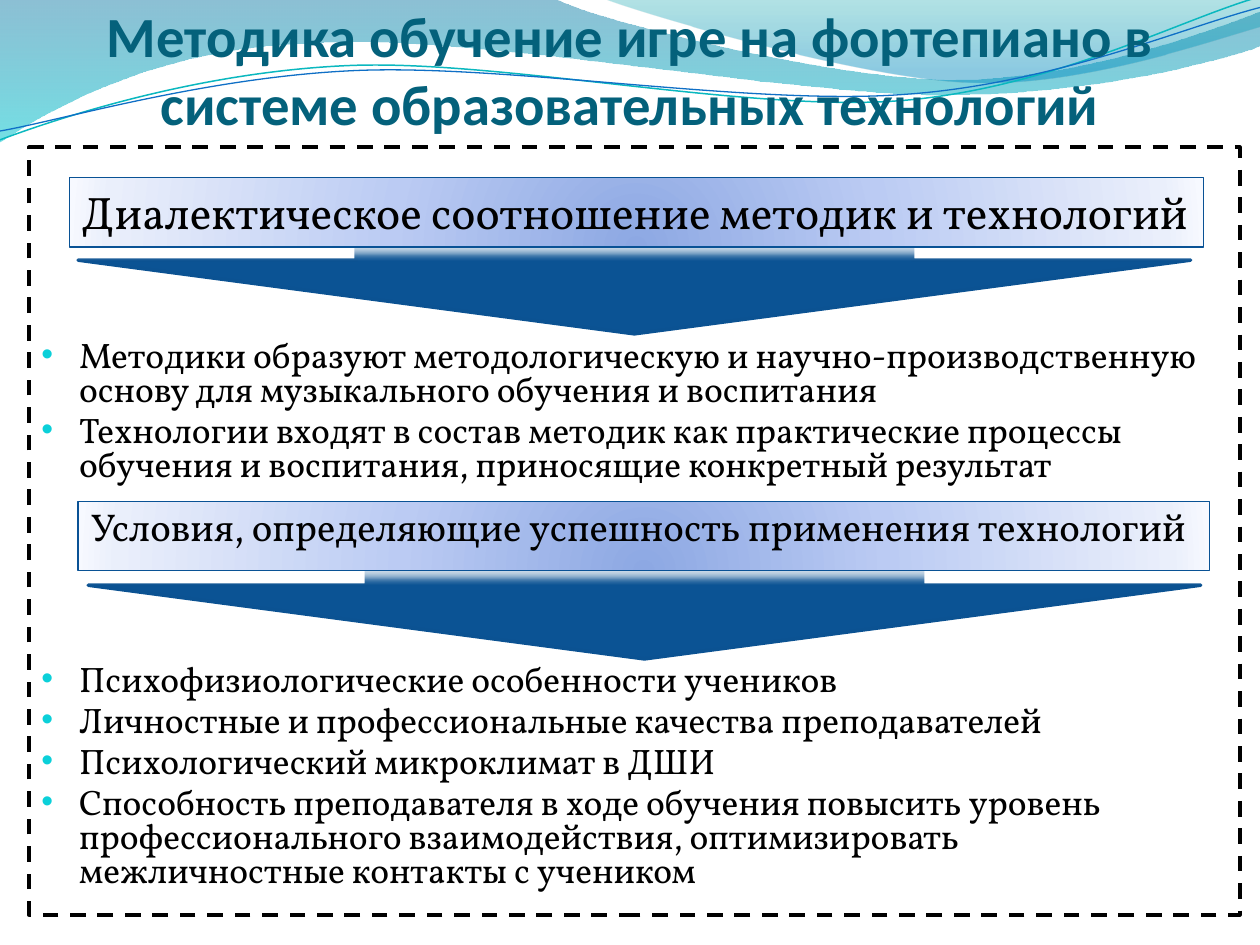
from math import cos, radians, sin

from lxml import etree
from pptx import Presentation
from pptx.dml.color import RGBColor
from pptx.enum.dml import MSO_LINE
from pptx.enum.shapes import MSO_SHAPE
from pptx.enum.text import MSO_ANCHOR, MSO_AUTO_SIZE, PP_ALIGN
from pptx.oxml import parse_xml
from pptx.oxml.ns import qn
from pptx.util import Inches, Pt

RECTANGLE, DOWN_ARROW, DASH = MSO_SHAPE.RECTANGLE, MSO_SHAPE.DOWN_ARROW, MSO_LINE.DASH
TOP, BOTTOM, NO_FIT = MSO_ANCHOR.TOP, MSO_ANCHOR.BOTTOM, MSO_AUTO_SIZE.NONE
LEFT, CENTER = PP_ALIGN.LEFT, PP_ALIGN.CENTER

BLACK = RGBColor(0x00, 0x00, 0x00)
TITLE_TEAL = RGBColor(0x04, 0x61, 0x7B)
ARROW_BLUE = RGBColor(0x0B, 0x53, 0x94)
ARROW_EDGE = RGBColor(0x0B, 0x52, 0x92)
BANNER_EDGE = RGBColor(0x09, 0x52, 0x95)
GLOW_WHITE = RGBColor(0xFF, 0xFF, 0xFF)
BULLET_CYAN = RGBColor(0x0B, 0xD0, 0xD9)
LINE_CYAN = RGBColor(0x0A, 0xB8, 0xBF)
LINE_BLUE = RGBColor(0x0F, 0x6F, 0xC6)
BANNER_STOPS = [(0, RGBColor(0x8D, 0xA8, 0xE3), 100), (43, RGBColor(0xBB, 0xCB, 0xF3), 100),
                (93, RGBColor(0xEA, 0xEF, 0xFB), 100), (100, RGBColor(0xF7, 0xF9, 0xFF), 100)]
DEEP_STOPS = [(0, RGBColor(0x00, 0x74, 0xA1), 45), (100, RGBColor(0x00, 0xC6, 0xCF), 55)]
PALE_STOPS = [(0, RGBColor(0x00, 0xA1, 0xA9), 30), (80, RGBColor(0x00, 0x8B, 0xBF), 45)]
DOWNWARD = '<a:lin ang="5400000" scaled="1"/>'
RADIAL = ('<a:path path="circle"><a:fillToRect l="50000" t="130000" '
          'r="50000" b="-30000"/></a:path>')

TITLE = "Методика обучение игре на фортепиано в системе образовательных технологий"
TITLE_FONT, BODY_FONT, BULLET_FONT = "Calibri", "Vollkorn", "Arial"
FRAME = (0.23, 1.17, 9.61, 6.09)
HANGING = 0.3
ARROW_SIZE = (8.83, 1.17)
SECTIONS = [
    {"heading": "Диалектическое соотношение методик и технологий",
     "banner": (0.55, 1.41, 9, 0.55), "arrow": (0.62, 1.48), "size": 26, "spacing": 1,
     "list": (0.23, 2.66, 9.53, 1.48),
     "points": [
         "Методики образуют методологическую и научно-производственную основу для "
         "музыкального обучения и воспитания",
         "Технологии входят в состав методик как практические процессы обучения и "
         "воспитания, приносящие конкретный результат"]},
    {"heading": "Условия, определяющие успешность применения технологий",
     "banner": (0.62, 3.98, 8.98, 0.55), "arrow": (0.7, 4.06), "size": 22.1, "spacing": 0.9,
     "list": (0.23, 5.23, 9.61, 2.03),
     "points": [
         "Психофизиологические особенности учеников",
         "Личностные и профессиональные качества преподавателей",
         "Психологический микроклимат в ДШИ",
         "Способность преподавателя в ходе обучения повысить уровень профессионального "
         "взаимодействия, оптимизировать межличностные контакты с учеником"]},
]
BANDS = [
    (DEEP_STOPS, (0, 0), [
        [(4.4, -0.01)],
        [(4.76, 0.17), (6.64, 0.63), (7.58, 0.63)],
        [(8.53, 0.63), (9.58, 0.26), (10, 0.09)],
        [(10.01, 0.36)],
        [(9.83, 0.44), (8.7, 0.76), (7.46, 0.75)],
        [(6.22, 0.75), (3.82, 0.28), (2.57, 0.34)],
        [(1.29, 0.36), (0.46, 0.83), (-0.01, 1.13)],
        [(0, 0)]]),
    (PALE_STOPS, (4.79, -0.01), [
        [(5.09, 0.11), (6.82, 0.62), (7.69, 0.65)],
        [(8.56, 0.69), (9.61, 0.32), (10, 0.21)],
        [(10, 0)],
        [(4.79, -0.01)]]),
]
STRAND_TILT = -2.7
STRANDS = [
    (LINE_CYAN, 0.85, (4.99, 0.58), (0, 1.11), [
        [(0.48, 0.93), (1.58, 0.57), (2.77, 0.52)],
        [(3.95, 0.47), (5.93, 0.89), (7.13, 0.8)],
        [(8.33, 0.71), (9.38, 0.15), (9.98, -0.02)]]),
    (LINE_BLUE, 0.75, (5, 0.59), (0, 1.04), [
        [(0.47, 0.96), (1.64, 0.61), (2.83, 0.56)],
        [(4.03, 0.51), (5.97, 0.84), (7.17, 0.75)],
        [(8.36, 0.67), (9.41, 0.21), (10, 0.06)]]),
]


def inches(box):
    return [Inches(value) for value in box]


def level(point, center):
    turn = radians(-STRAND_TILT)
    x, y = point[0] - center[0], point[1] - center[1]
    return (center[0] + x * cos(turn) - y * sin(turn),
            center[1] + x * sin(turn) + y * cos(turn))


def add_wave(shapes, start, steps, closed):
    builder = shapes.build_freeform(*inches(start), scale=1.0)
    builder.add_line_segments([inches(point) for step in steps for point in step], close=closed)
    wave = builder.convert_to_shape()
    wave.shadow.inherit = False
    edges = iter(list(wave._element.iter(qn("a:lnTo"))))
    for step in steps:
        group = [next(edges) for _ in step]
        if len(group) == 3:
            curve = etree.Element(qn("a:cubicBezTo"))
            group[0].addprevious(curve)
            for edge in group:
                curve.append(edge[0])
                edge.getparent().remove(edge)
    return wave


def set_gradient(shape, stops, direction):
    stop_xml = "".join(
        f'<a:gs pos="{pos * 1000}"><a:srgbClr val="{color}"><a:alpha val="{alpha * 1000}"/>'
        '</a:srgbClr></a:gs>' for pos, color, alpha in stops)
    shape._element.spPr[1].addnext(parse_xml(
        '<a:gradFill xmlns:a="http://schemas.openxmlformats.org/drawingml/2006/main" '
        f'rotWithShape="1"><a:gsLst>{stop_xml}</a:gsLst>{direction}</a:gradFill>'))


def set_line(shape, color, width):
    shape.line.color.rgb = color
    shape.line.width = Pt(width)


def add_glow(shape):
    effects = shape._element.spPr.find(qn("a:effectLst"))
    glow = etree.SubElement(effects, qn("a:outerShdw"), blurRad=str(Pt(4.5)),
                            dist=str(Pt(3)), dir="5400000", rotWithShape="0")
    color = etree.SubElement(glow, qn("a:srgbClr"), val=str(GLOW_WHITE))
    etree.SubElement(color, qn("a:alpha"), val="80000")


def write(frame, texts, size, spacing, bulleted):
    frame.word_wrap = True
    frame.vertical_anchor = TOP
    for i, text in enumerate(texts):
        paragraph = frame.add_paragraph() if i else frame.paragraphs[0]
        paragraph.text = text
        properties = paragraph._p.get_or_add_pPr()
        properties.set("marL", str(Inches(HANGING)))
        properties.set("indent", str(-Inches(HANGING)))
        if bulleted:
            tint = etree.SubElement(properties, qn("a:buClr"))
            etree.SubElement(tint, qn("a:srgbClr"), val=str(BULLET_CYAN))
            etree.SubElement(properties, qn("a:buSzPct"), val="95000")
            etree.SubElement(properties, qn("a:buFont"), typeface=BULLET_FONT)
            etree.SubElement(properties, qn("a:buChar"), char="•")
        paragraph.alignment = LEFT
        paragraph.line_spacing = spacing
        if i:
            paragraph.space_before = Pt(4)
        font = paragraph.font
        font.name, font.size, font.color.rgb = BODY_FONT, Pt(size), BLACK


def place_title(slide):
    title = slide.shapes.title
    title.left, title.top, title.width, title.height = inches((0.31, 0.77, 9.38, 0.32))
    frame = title.text_frame
    frame.text = TITLE
    frame.word_wrap, frame.auto_size, frame.vertical_anchor = True, NO_FIT, BOTTOM
    frame.margin_left = frame.margin_right = frame.margin_bottom = 0
    frame.margin_top = Inches(0.05)
    paragraph = frame.paragraphs[0]
    paragraph.alignment = CENTER
    font = paragraph.font
    font.name, font.size, font.bold, font.color.rgb = TITLE_FONT, Pt(32.4), True, TITLE_TEAL
    slide.shapes._spTree.append(title._element)


def add_section(shapes, section):
    arrow = shapes.add_shape(DOWN_ARROW, *inches(section["arrow"] + ARROW_SIZE))
    arrow.shadow.inherit = False
    arrow.fill.solid()
    arrow.fill.fore_color.rgb = ARROW_BLUE
    set_line(arrow, ARROW_EDGE, 2)
    banner = shapes.add_shape(RECTANGLE, *inches(section["banner"]))
    banner.shadow.inherit = False
    set_gradient(banner, BANNER_STOPS, RADIAL)
    set_line(banner, BANNER_EDGE, 0.75)
    add_glow(banner)
    write(banner.text_frame, [section["heading"]], section["size"], section["spacing"], False)
    points = shapes.add_textbox(*inches(section["list"]))
    write(points.text_frame, section["points"], 20.2, 0.8, True)


def main():
    """Build the slide on piano teaching methods and save it."""
    deck = Presentation()
    deck.slide_width, deck.slide_height = inches((10, 7.5))
    slide = deck.slides.add_slide(deck.slide_layouts[5])
    shapes = slide.shapes
    for stops, start, steps in BANDS:
        band = add_wave(shapes, start, steps, True)
        set_gradient(band, stops, DOWNWARD)
        band.line.fill.background()
    for color, width, center, start, steps in STRANDS:
        level_steps = [[level(point, center) for point in step] for step in steps]
        strand = add_wave(shapes, level(start, center), level_steps, False)
        strand.rotation = STRAND_TILT
        strand.fill.background()
        set_line(strand, color, width)
    place_title(slide)
    frame = shapes.add_shape(RECTANGLE, *inches(FRAME))
    frame.shadow.inherit = False
    frame.fill.background()
    set_line(frame, BLACK, 2.25)
    frame.line.dash_style = DASH
    for section in SECTIONS:
        add_section(shapes, section)
    deck.save("out.pptx")


if __name__ == "__main__":
    main()
